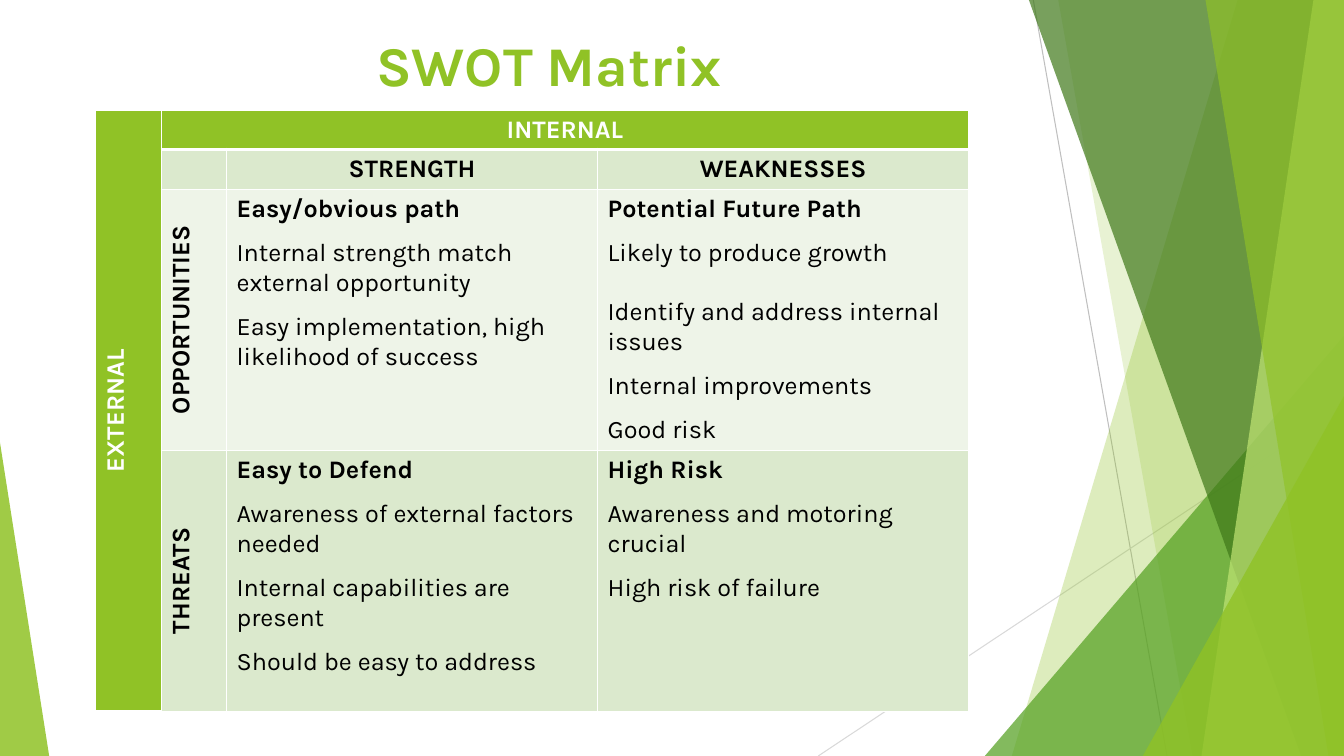
from lxml.etree import SubElement
from pptx import Presentation
from pptx.dml.color import RGBColor
from pptx.enum.shapes import MSO_CONNECTOR as LINE, MSO_SHAPE as SHAPE
from pptx.enum.text import MSO_ANCHOR as ANCHOR, MSO_AUTO_SIZE as FIT, PP_ALIGN as ALIGN
from pptx.oxml import parse_xml
from pptx.oxml.ns import nsdecls, qn
from pptx.util import Cm, Pt

COLORS = {
    "lime": "90C226", "leaf": "54A021", "forest": "3F7819", "pale": "C0E474",
    "white": "FFFFFF", "black": "000000", "mid": "DBE9CD", "light": "EEF4E8",
    "gray": "BFBFBF", "silver": "D9D9D9",
}
FONT = "Karla"
WIDTH, HEIGHT = 33.87, 19.05

TITLE = "SWOT Matrix"
TITLE_BOX = (2.41, 0.64, 22.86, 1.7)
TABLE_POS = (2.41, 2.77)
COLS = (1.65, 1.65, 9.35, 9.35)
ROWS = (0.99, 0.99, 6.58, 6.58)
GAP, WIDE_GAP = 10.5, 21  # space before a paragraph, in points

# (row, column): text, fill, text colour, vertical
LABELS = {
    (0, 0): ("EXTERNAL", "lime", "white", True),
    (0, 1): ("INTERNAL", "lime", "white", False),
    (1, 1): ("", "mid", "black", False),
    (1, 2): ("STRENGTH", "mid", "black", False),
    (1, 3): ("WEAKNESSES", "mid", "black", False),
    (2, 1): ("OPPORTUNITIES", "light", "black", True),
    (3, 1): ("THREATS", "mid", "black", True),
}
# (row, column): fill, heading, points with the space before each
QUADRANTS = {
    (2, 2): ("light", "Easy/obvious path", [
        ("Internal strength match external opportunity", GAP),
        ("Easy implementation, high likelihood of success", GAP)]),
    (2, 3): ("light", "Potential Future Path", [
        ("Likely to produce growth", GAP),
        ("Identify and address internal issues", WIDE_GAP),
        ("Internal improvements", GAP),
        ("Good risk", GAP)]),
    (3, 2): ("mid", "Easy to Defend", [
        ("Awareness of external factors needed", GAP),
        ("Internal capabilities are present", GAP),
        ("Should be easy to address", GAP)]),
    (3, 3): ("mid", "High Risk", [
        ("Awareness and motoring crucial", GAP),
        ("High risk of failure", GAP)]),
}

RAYS = [((26.04, 0), (29.41, HEIGHT), "gray"),
        ((WIDTH, 10.24), (20.62, HEIGHT), "silver")]
# band: x at top, x at bottom; triangle: left, top, width, apex position
FACETS = [
    ("band", (31.19, 25.5), "lime", 30),
    ("band", (26.67, 30.05), "lime", 20),
    ("triangle", (24.82, 8.46, 9.05, 1), "leaf", 72),
    ("band", (25.93, 32.79), "forest", 70),
    ("band", (33.1, 30.28), "pale", 70),
    ("band", (30.38, 33.48), "lime", 65),
    ("triangle", (28.8, 9.98, 5.07, 1), "lime", 80),
    ("triangle", (0, 11.15, 1.24, 0), "lime", 85),
]


def rgb(name):
    return RGBColor.from_string(COLORS[name])


def write(p, text, size=18, color="black", bold=False, align=ALIGN.LEFT, before=0):
    p.alignment = align
    p.space_before = Pt(before)
    r = p.add_run()
    r.text = text
    r.font.name, r.font.size, r.font.bold = FONT, Pt(size), bold
    r.font.color.rgb = rgb(color)


def add_ray(s, start, end, color):
    ray = s.shapes.add_connector(LINE.STRAIGHT, *map(Cm, start + end))
    ray.line.color.rgb = rgb(color)
    ray.line.width = Pt(0.75)
    SubElement(ray._element.spPr, qn("a:effectLst"))


def add_facet(s, kind, geometry, color, opacity):
    if kind == "band":
        top, bottom = geometry
        outline = s.shapes.build_freeform(Cm(top), 0)
        corners = [(WIDTH, 0), (WIDTH, HEIGHT), (bottom, HEIGHT)]
        outline.add_line_segments([(Cm(x), Cm(y)) for x, y in corners])
        sp = outline.convert_to_shape()
    else:
        left, top, width, apex = geometry
        sp = s.shapes.add_shape(SHAPE.ISOSCELES_TRIANGLE, Cm(left), Cm(top),
                                Cm(width), Cm(HEIGHT - top))
        sp.adjustments[0] = apex
    sp.shadow.inherit = False
    sp.line.fill.background()
    sp.fill.solid()
    sp.fill.fore_color.rgb = rgb(color)
    clr = sp._element.spPr.find(qn("a:solidFill"))[0]
    SubElement(clr, qn("a:alpha"), val=str(opacity * 1000))


def style_cell(cell, fill, bottom=1):
    """Fill the cell and give it white borders; widths are in points."""
    cell.fill.solid()
    cell.fill.fore_color.rgb = rgb(fill)
    tcPr = cell._tc.get_or_add_tcPr()
    for i, (side, width) in enumerate(zip("LRTB", (1, 1, 1, bottom))):
        tcPr.insert(i, parse_xml(
            f'<a:ln{side} {nsdecls("a")} w="{Pt(width)}"><a:solidFill>'
            f'<a:srgbClr val="{COLORS["white"]}"/></a:solidFill></a:ln{side}>'))


def add_matrix(s):
    left, top = TABLE_POS
    frame = s.shapes.add_table(len(ROWS), len(COLS), Cm(left), Cm(top),
                               Cm(sum(COLS)), Cm(sum(ROWS)))
    table = frame.table
    for col, width in zip(table.columns, COLS):
        col.width = Cm(width)
    for row, height in zip(table.rows, ROWS):
        row.height = Cm(height)
    table.cell(0, 0).merge(table.cell(3, 0))
    table.cell(0, 1).merge(table.cell(0, 3))

    for (row, col), (text, fill, color, vertical) in LABELS.items():
        cell = table.cell(row, col)
        style_cell(cell, fill, bottom=3 if row == 0 else 1)
        if vertical:
            cell._tc.get_or_add_tcPr().set("vert", "vert270")
        write(cell.text_frame.paragraphs[0], text, color=color, bold=True,
              align=ALIGN.CENTER)

    for (row, col), (fill, heading, points) in QUADRANTS.items():
        cell = table.cell(row, col)
        style_cell(cell, fill)
        tf = cell.text_frame
        write(tf.paragraphs[0], heading, bold=True)
        for text, before in points:
            write(tf.add_paragraph(), text, before=before)


def main():
    prs = Presentation()
    prs.slide_width, prs.slide_height = Cm(WIDTH), Cm(HEIGHT)
    s = prs.slides.add_slide(prs.slide_layouts[5])
    for ray in RAYS:
        add_ray(s, *ray)
    for facet in FACETS:
        add_facet(s, *facet)

    title = s.shapes.title
    title.left, title.top, title.width, title.height = map(Cm, TITLE_BOX)
    tf = title.text_frame
    tf.word_wrap, tf.auto_size, tf.vertical_anchor = True, FIT.NONE, ANCHOR.TOP
    write(tf.paragraphs[0], TITLE, size=40, color="lime", bold=True, align=ALIGN.CENTER)

    add_matrix(s)
    prs.save("out.pptx")


if __name__ == "__main__":
    main()
